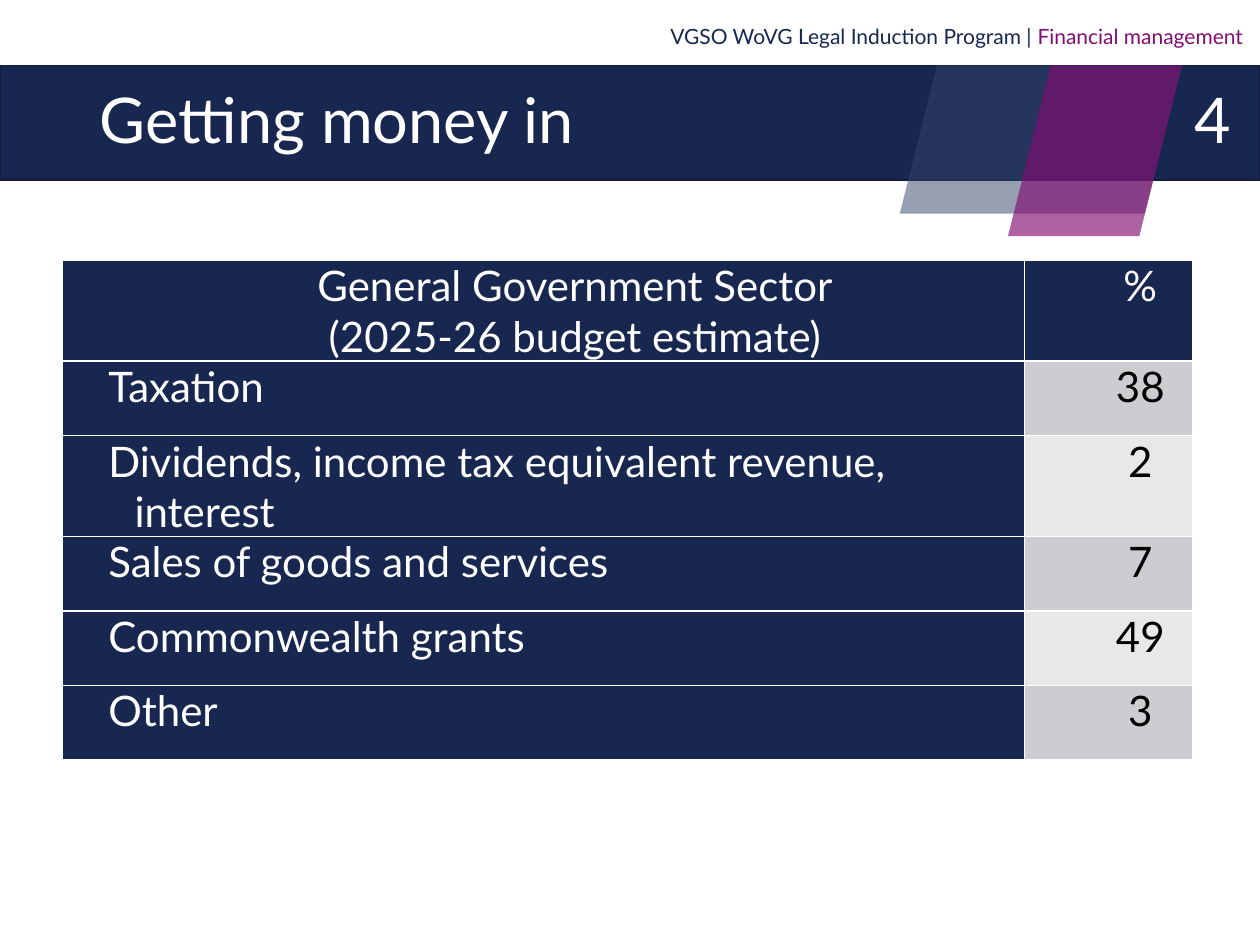
import pptx
import pptx.dml.color
import pptx.enum.shapes
import pptx.enum.text
import pptx.oxml.ns
import pptx.util
from lxml import etree

Pt = pptx.util.Pt
ALIGN = pptx.enum.text.PP_ALIGN
ANCHOR = pptx.enum.text.MSO_ANCHOR
SHAPE = pptx.enum.shapes.MSO_SHAPE

THEME = {
    "font": "Lato", "title": 36, "body": 24, "running head": 12,
    "navy": "172750", "navy edge": "111D3B", "slate": "34436A", "purple": "810D70",
    "white": "FFFFFF", "black": "000000", "bands": ("CCCDD0", "E8E8E9"),
}

TITLE = "Getting money in"
PAGE_NUMBER = "4"
RUNNING_HEAD = [("VGSO WoVG Legal Induction Program | ", "navy"),
                ("Financial management", "purple")]
HEADINGS = (["General Government Sector", "(2025-26 budget estimate)"], ["%"])
REVENUE = [
    ("Taxation", 38),
    ("Dividends, income tax equivalent revenue, interest", 2),
    ("Sales of goods and services", 7),
    ("Commonwealth grants", 49),
    ("Other", 3),
]

SLIDE_WIDTH, SLIDE_HEIGHT = 720, 540
BAND_TOP, BAND_HEIGHT = 37.4, 65.6
ACCENT_RIGHT = 675.4
TABLE_LEFT, TABLE_TOP = 35.5, 148.8
COLUMN_WIDTHS = (550, 96.3)
HEADER_HEIGHT, ROW_HEIGHT = 57.6, 42.6
CELL_MARGIN, CELL_INDENT, HANGING = 5.4, 36, 15


def rgb(value):
    return pptx.dml.color.RGBColor.from_string(value)


def style_font(font, size, color):
    font.name = THEME["font"]
    font.size = Pt(THEME[size])
    font.color.rgb = rgb(THEME[color])


def add_block(slide, preset, left, top, width, height, color, opacity=None, edge=None):
    """Add a filled shape; opacity is a percentage."""
    shape = slide.shapes.add_shape(preset, Pt(left), Pt(top), Pt(width), Pt(height))
    shape.shadow.inherit = False
    shape.fill.solid()
    shape.fill.fore_color.rgb = rgb(THEME[color])
    if opacity:
        color_element = shape.fill._xPr.find(".//" + pptx.oxml.ns.qn("a:srgbClr"))
        etree.SubElement(color_element, pptx.oxml.ns.qn("a:alpha"), val=str(opacity * 1000))
    if edge:
        shape.line.color.rgb = rgb(THEME[edge])
        shape.line.width = Pt(1)
    else:
        shape.line.fill.background()


def add_label(slide, left, top, width, height, runs, size, anchor, alignment=ALIGN.LEFT):
    frame = slide.shapes.add_textbox(Pt(left), Pt(top), Pt(width), Pt(height)).text_frame
    frame.word_wrap = True
    frame.vertical_anchor = anchor
    paragraph = frame.paragraphs[0]
    paragraph.alignment = alignment
    paragraph.line_spacing = 0.9
    style_font(paragraph.font, size, runs[0][1])
    for text, color in runs:
        run = paragraph.add_run()
        run.text = text
        if color != runs[0][1]:
            run.font.color.rgb = rgb(THEME[color])


def fill_cell(cell, lines, fill, color, centred):
    cell.margin_left = cell.margin_right = Pt(CELL_MARGIN)
    cell.margin_top = cell.margin_bottom = 0
    cell.text = "\n".join(lines)
    for paragraph in cell.text_frame.paragraphs:
        properties = paragraph._p.get_or_add_pPr()
        properties.set("marL", str(Pt(CELL_INDENT)))
        properties.set("indent", str(Pt(0 if centred else -HANGING)))
        paragraph.alignment = ALIGN.CENTER if centred else ALIGN.LEFT
        style_font(paragraph.font, "body", color)
    cell_properties = cell._tc.get_or_add_tcPr()
    for side in ("lnL", "lnR", "lnT", "lnB"):
        border = etree.SubElement(cell_properties, pptx.oxml.ns.qn("a:" + side), w=str(Pt(1)))
        solid = etree.SubElement(border, pptx.oxml.ns.qn("a:solidFill"))
        etree.SubElement(solid, pptx.oxml.ns.qn("a:srgbClr"), val=THEME["white"])
    cell.fill.solid()
    cell.fill.fore_color.rgb = rgb(fill)


def add_revenue_table(slide):
    height = HEADER_HEIGHT + ROW_HEIGHT * len(REVENUE)
    table = slide.shapes.add_table(
        len(REVENUE) + 1, len(COLUMN_WIDTHS), Pt(TABLE_LEFT), Pt(TABLE_TOP),
        Pt(sum(COLUMN_WIDTHS)), Pt(height)).table
    table.first_row = table.horz_banding = False
    for column, width in zip(table.columns, COLUMN_WIDTHS):
        column.width = Pt(width)
    for index, row in enumerate(table.rows):
        row.height = Pt(ROW_HEIGHT if index else HEADER_HEIGHT)
    for column, lines in enumerate(HEADINGS):
        fill_cell(table.cell(0, column), lines, THEME["navy"], "white", True)
    for index, (source, percent) in enumerate(REVENUE):
        fill_cell(table.cell(index + 1, 0), [source], THEME["navy"], "white", False)
        fill_cell(table.cell(index + 1, 1), [str(percent)], THEME["bands"][index % 2],
                  "black", True)


def main():
    presentation = pptx.Presentation()
    presentation.slide_width, presentation.slide_height = Pt(SLIDE_WIDTH), Pt(SLIDE_HEIGHT)
    slide = presentation.slides.add_slide(presentation.slide_layouts[6])

    add_block(slide, SHAPE.RECTANGLE, 0, BAND_TOP, SLIDE_WIDTH, BAND_HEIGHT, "navy",
              edge="navy edge")
    for width, height, color, opacity in ((161.2, 84.6, "slate", 51), (99.4, 97.6, "purple", 65)):
        add_block(slide, SHAPE.PARALLELOGRAM, ACCENT_RIGHT - width, BAND_TOP, width, height,
                  color, opacity)

    add_label(slide, 50, BAND_TOP, 448, BAND_HEIGHT, [(TITLE, "white")], "title", ANCHOR.MIDDLE)
    add_label(slide, ACCENT_RIGHT, BAND_TOP, SLIDE_WIDTH - ACCENT_RIGHT, BAND_HEIGHT,
              [(PAGE_NUMBER, "white")], "title", ANCHOR.MIDDLE)
    add_label(slide, 278.5, 8, 439, 23.5, RUNNING_HEAD, "running head", ANCHOR.BOTTOM,
              ALIGN.RIGHT)
    add_revenue_table(slide)
    presentation.save("out.pptx")


if __name__ == "__main__":
    main()
